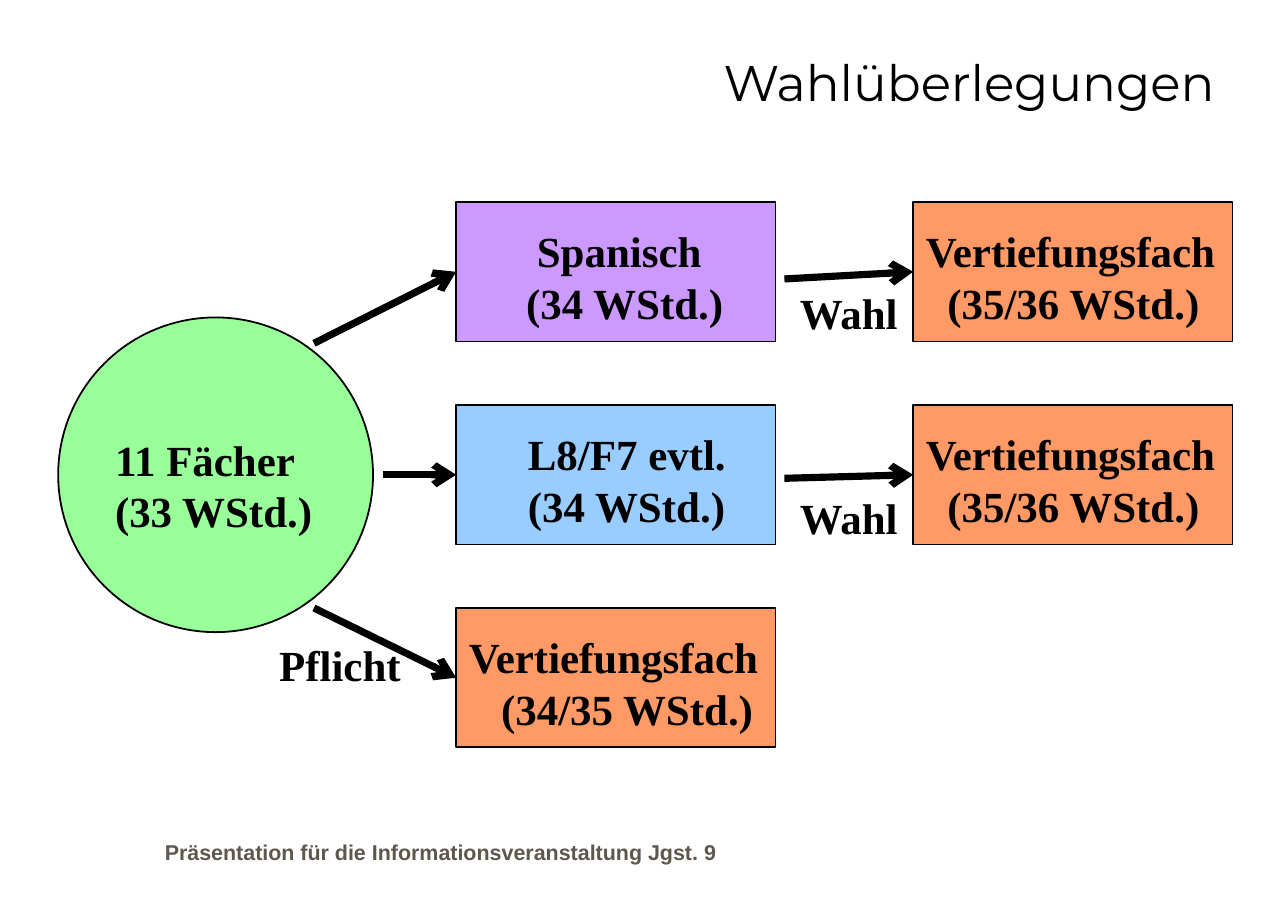
import pptx
import pptx.util
import pptx.dml.color
import pptx.enum.shapes
import pptx.enum.text
import pptx.oxml
import pptx.oxml.ns
from dataclasses import dataclass

Pt = pptx.util.Pt
RGB = pptx.dml.color.RGBColor.from_string
ALIGN = pptx.enum.text.PP_ALIGN
ANCHOR = pptx.enum.text.MSO_ANCHOR
SHAPE = pptx.enum.shapes.MSO_SHAPE


@dataclass(frozen=True)
class Theme:
    ink: str = "000000"
    footer: str = "5E574E"
    circle: str = "99FF99"
    spanish: str = "CC99FF"
    language: str = "99CCFF"
    advanced: str = "FF9966"
    title_font: str = "Montserrat"
    body_font: str = "Times New Roman"
    footer_font: str = "Arial"
    title_size: int = 28
    body_size: int = 24
    footer_size: int = 12
    outline: int = 1
    arrow: int = 4


T = Theme()
TITLE_STYLE = (T.title_font, T.title_size, T.ink, False)
BODY_STYLE = (T.body_font, T.body_size, T.ink, True)
FOOTER_STYLE = (T.footer_font, T.footer_size, T.footer, True)

TITLE = "Wahlüberlegungen"
FOOTER = "Präsentation für die Informationsveranstaltung Jgst. 9"
SUBJECTS = [("11 Fächer", 0), ("(33 WStd.)", 0)]
BOXES = [
    (0, 0, T.spanish, [("Spanisch", 38), ("(34 WStd.)", 32)]),
    (0, 1, T.language, [("L8/F7 evtl.", 33), ("(34 WStd.)", 33)]),
    (0, 2, T.advanced, [("Vertiefungsfach", 0), ("(34/35 WStd.)", 18)]),
    (1, 0, T.advanced, [("Vertiefungsfach", 0), ("(35/36 WStd.)", 12)]),
    (1, 1, T.advanced, [("Vertiefungsfach", 0), ("(35/36 WStd.)", 12)]),
]
LABELS = [("Pflicht", 149, 353.5, 87), ("Wahl", 440, 156.5, 71), ("Wahl", 440, 271.5, 71)]

LEFT, TOP, BOX_W, BOX_H = 255, 113, 178.5, 78
COL_STEP, ROW_STEP = 255.5, 113.5
CIRCLE_LEFT, CIRCLE_D = 32.5, 176
MIDDLE = TOP + ROW_STEP + BOX_H / 2
ARROW_STARTS = {
    (0, 0): (175.5, 192),
    (0, 1): (214, MIDDLE),
    (0, 2): (175.5, 340),
    (1, 0): (438.5, 156),
    (1, 1): (438.5, 267.5),
}


def write(tf, lines, style, align=ALIGN.LEFT):
    font, size, color, bold = style
    for i, (text, indent) in enumerate(lines):
        p = tf.paragraphs[0] if i == 0 else tf.add_paragraph()
        p.alignment = align
        if indent:
            p._p.get_or_add_pPr().set("marL", str(Pt(indent)))
        r = p.add_run()
        r.text = text
        r.font.name, r.font.size, r.font.bold = font, Pt(size), bold
        r.font.color.rgb = RGB(color)


def add_text(s, text, box, style, align=ALIGN.LEFT, anchor=ANCHOR.TOP):
    tf = s.shapes.add_textbox(*map(Pt, box)).text_frame
    tf.word_wrap = True
    tf.vertical_anchor = anchor
    write(tf, [(text, 0)], style, align)


def add_node(s, kind, box, fill, lines, inset, drop):
    sp = s.shapes.add_shape(kind, *map(Pt, box))
    sp.shadow.inherit = False
    sp.fill.solid()
    sp.fill.fore_color.rgb = RGB(fill)
    sp.line.color.rgb = RGB(T.ink)
    sp.line.width = Pt(T.outline)
    tf = sp.text_frame
    tf.word_wrap = True
    tf.vertical_anchor = ANCHOR.MIDDLE
    tf.margin_left, tf.margin_right = Pt(inset), 0
    tf.margin_top, tf.margin_bottom = Pt(drop), 0
    write(tf, lines, BODY_STYLE)
    return sp


def add_arrow(s, start, target):
    x, y = map(Pt, start)
    c = s.shapes.add_connector(pptx.enum.shapes.MSO_CONNECTOR.STRAIGHT, x, y, x, y)
    c.end_connect(target, 1)
    c.line.color.rgb = RGB(T.ink)
    c.line.width = Pt(T.arrow)
    tail = pptx.oxml.ns.qn("a:tailEnd")
    c.line._get_or_add_ln().makeelement(tail)
    ln = c.line._get_or_add_ln()
    ln.append(ln.makeelement(tail, {"type": "arrow"}))
    pr = c._element.spPr
    pr.append(pr.makeelement(pptx.oxml.ns.qn("a:effectLst")))


def main():
    """Build the slide on subject choices and weekly hours."""
    prs = pptx.Presentation()
    prs.slide_width, prs.slide_height = Pt(720), Pt(510)
    s = prs.slides.add_slide(prs.slide_layouts[6])
    add_text(s, TITLE, (60, 19.5, 626, 52), TITLE_STYLE, ALIGN.RIGHT, ANCHOR.MIDDLE)
    circle = (CIRCLE_LEFT, MIDDLE - CIRCLE_D / 2, CIRCLE_D, CIRCLE_D)
    add_node(s, SHAPE.OVAL, circle, T.circle, SUBJECTS, 6, 11)
    for col, row, fill, lines in BOXES:
        box = (LEFT + col * COL_STEP, TOP + row * ROW_STEP, BOX_W, BOX_H)
        sp = add_node(s, SHAPE.RECTANGLE, box, fill, lines, 7.2, 5)
        add_arrow(s, ARROW_STARTS[col, row], sp)
    for text, x, y, width in LABELS:
        add_text(s, text, (x, y, width, 36), BODY_STYLE)
    add_text(s, FOOTER, (85, 467.5, 486, 19.5), FOOTER_STYLE, anchor=ANCHOR.BOTTOM)
    prs.save("out.pptx")


if __name__ == "__main__":
    main()
